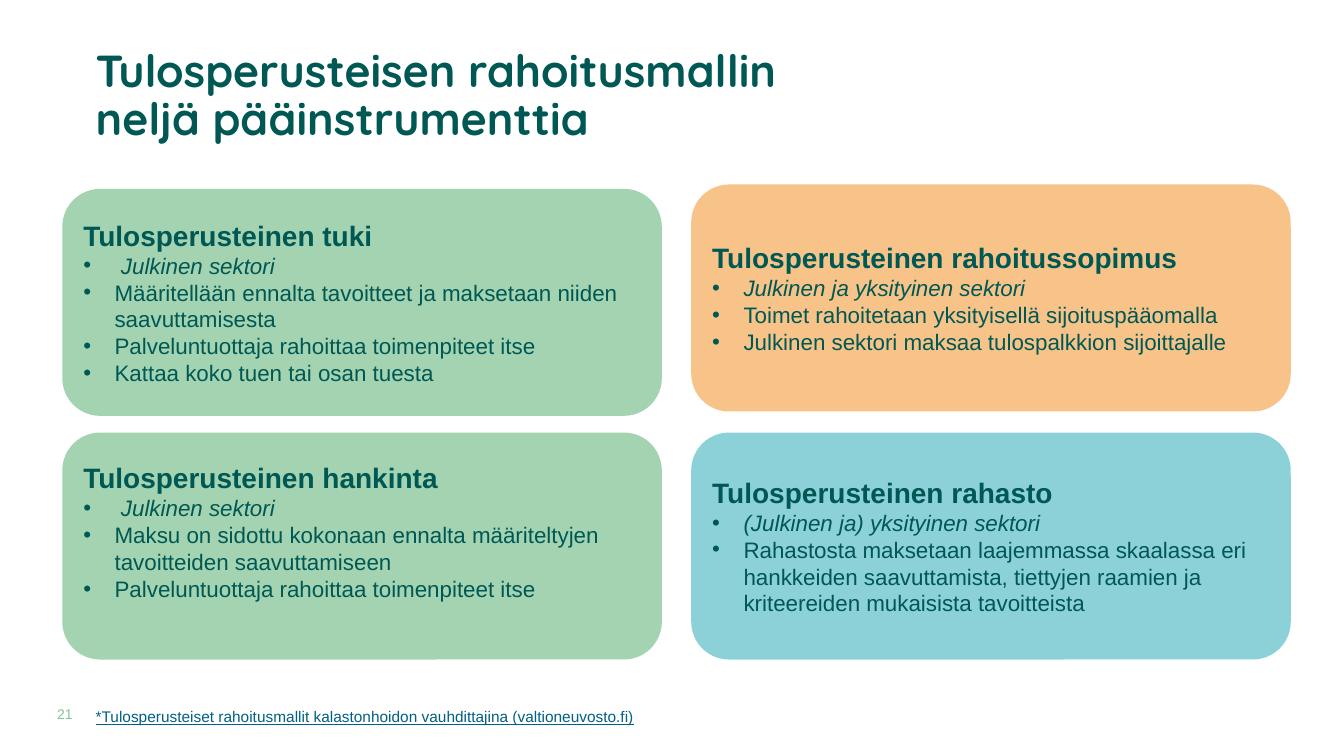
from dataclasses import dataclass

from lxml.etree import SubElement
from pptx import Presentation
from pptx.dml.color import RGBColor
from pptx.enum.shapes import MSO_SHAPE
from pptx.enum.text import MSO_ANCHOR, PP_ALIGN
from pptx.oxml.ns import qn
from pptx.slide import Slide
from pptx.util import Cm, Pt

DARK_GREEN = "005854"
GREEN = "84C497"
ORANGE = "F3A44C"
TURQUOISE = "64C1CB"
LINK_BLUE = "006085"
LEFT_COLUMN, RIGHT_COLUMN = 1.57, 17.42
LOWER_ROW = 10.9
CARD_WIDTH, CARD_HEIGHT = 15.11, 5.72
BULLET_INDENT, WIDE_INDENT = 0.79, 0.95


@dataclass
class Label:
    text: str
    left: float
    top: float
    width: float
    height: float
    size: int
    color: str
    font: str = "Arial"
    bold: bool = False
    underline: bool = False
    line_spacing: float = 1.0
    margin: float = 0.25
    align: PP_ALIGN = PP_ALIGN.LEFT
    anchor: MSO_ANCHOR = MSO_ANCHOR.MIDDLE


@dataclass
class Card:
    heading: str
    sector: str
    points: list[str]
    left: float
    top: float
    color: str
    opacity: int
    sector_indent: float = BULLET_INDENT
    bottom_margin: float = 0.13


LABELS = [
    Label("21", 0.18, 17.7, 1.65, 0.51, 10, GREEN, margin=0,
          align=PP_ALIGN.RIGHT, anchor=MSO_ANCHOR.BOTTOM),
    Label("Tulosperusteisen rahoitusmallin neljä pääinstrumenttia",
          2.16, 1.07, 18.75, 2.74, 32, DARK_GREEN, font="Quicksand",
          bold=True, line_spacing=0.9),
    Label("*Tulosperusteiset rahoitusmallit kalastonhoidon vauhdittajina (valtioneuvosto.fi)",
          2.16, 17.68, 16.94, 0.74, 11, LINK_BLUE, underline=True),
]

CARDS = [
    Card("Tulosperusteinen tuki", "Julkinen sektori",
         ["Määritellään ennalta tavoitteet ja maksetaan niiden saavuttamisesta",
          "Palveluntuottaja rahoittaa toimenpiteet itse",
          "Kattaa koko tuen tai osan tuesta"],
         LEFT_COLUMN, 4.76, GREEN, 74, sector_indent=WIDE_INDENT),
    Card("Tulosperusteinen rahoitussopimus", "Julkinen ja yksityinen sektori",
         ["Toimet rahoitetaan yksityisellä sijoituspääomalla",
          "Julkinen sektori maksaa tulospalkkion sijoittajalle"],
         RIGHT_COLUMN, 4.65, ORANGE, 66),
    Card("Tulosperusteinen rahasto", "(Julkinen ja) yksityinen sektori",
         ["Rahastosta maksetaan laajemmassa skaalassa eri hankkeiden saavuttamista, "
          "tiettyjen raamien ja kriteereiden mukaisista tavoitteista"],
         RIGHT_COLUMN, LOWER_ROW, TURQUOISE, 74),
    Card("Tulosperusteinen hankinta", "Julkinen sektori",
         ["Maksu on sidottu kokonaan ennalta määriteltyjen tavoitteiden saavuttamiseen",
          "Palveluntuottaja rahoittaa toimenpiteet itse"],
         LEFT_COLUMN, LOWER_ROW, GREEN, 74, sector_indent=WIDE_INDENT,
         bottom_margin=0.86),
]


def rgb(color: str) -> RGBColor:
    return RGBColor.from_string(color)


def format_runs(para, size: int, color: str, font: str = "Arial", bold: bool = False,
                italic: bool = False, underline: bool = False) -> None:
    for span in para.runs:
        span.font.name = font
        span.font.size = Pt(size)
        span.font.color.rgb = rgb(color)
        span.font.bold = bold
        span.font.italic = italic
        span.font.underline = underline


def add_bullet(para, indent: float) -> None:
    properties = para._p.get_or_add_pPr()
    properties.set("marL", str(Cm(indent)))
    properties.set("indent", str(-Cm(indent)))
    SubElement(properties, qn("a:buFont")).set("typeface", "Arial")
    SubElement(properties, qn("a:buChar")).set("char", "•")


def draw_label(page: Slide, label: Label) -> None:
    box = page.shapes.add_textbox(Cm(label.left), Cm(label.top),
                                  Cm(label.width), Cm(label.height))
    frame = box.text_frame
    frame.word_wrap = True
    frame.vertical_anchor = label.anchor
    frame.margin_left = frame.margin_right = Cm(label.margin)
    frame.margin_top = frame.margin_bottom = Cm(label.margin / 2)
    frame.text = label.text
    para = frame.paragraphs[0]
    para.alignment = label.align
    para.line_spacing = label.line_spacing
    format_runs(para, label.size, label.color, label.font, label.bold,
                underline=label.underline)


def draw_card(page: Slide, card: Card) -> None:
    box = page.shapes.add_shape(MSO_SHAPE.ROUNDED_RECTANGLE, Cm(card.left), Cm(card.top),
                                Cm(CARD_WIDTH), Cm(CARD_HEIGHT))
    box.shadow.inherit = False
    box.fill.solid()
    box.fill.fore_color.rgb = rgb(card.color)
    fill_color = box._element.spPr.find(qn("a:solidFill"))[0]
    SubElement(fill_color, qn("a:alpha")).set("val", str(card.opacity * 1000))
    box.line.fill.background()

    frame = box.text_frame
    frame.word_wrap = True
    frame.vertical_anchor = MSO_ANCHOR.MIDDLE
    frame.margin_bottom = Cm(card.bottom_margin)
    frame.text = "\n".join([card.heading, card.sector, *card.points])
    heading, sector, *points = frame.paragraphs
    for para in frame.paragraphs:
        para.alignment = PP_ALIGN.LEFT
    format_runs(heading, 20, DARK_GREEN, bold=True)
    add_bullet(sector, card.sector_indent)
    format_runs(sector, 16, DARK_GREEN, italic=True)
    for para in points:
        add_bullet(para, BULLET_INDENT)
        format_runs(para, 16, DARK_GREEN)


def main() -> None:
    deck = Presentation()
    deck.slide_width, deck.slide_height = Cm(33.87), Cm(19.05)
    page = deck.slides.add_slide(deck.slide_layouts[6])
    for card in CARDS:
        draw_card(page, card)
    for label in LABELS:
        draw_label(page, label)
    deck.save("out.pptx")


if __name__ == "__main__":
    main()
